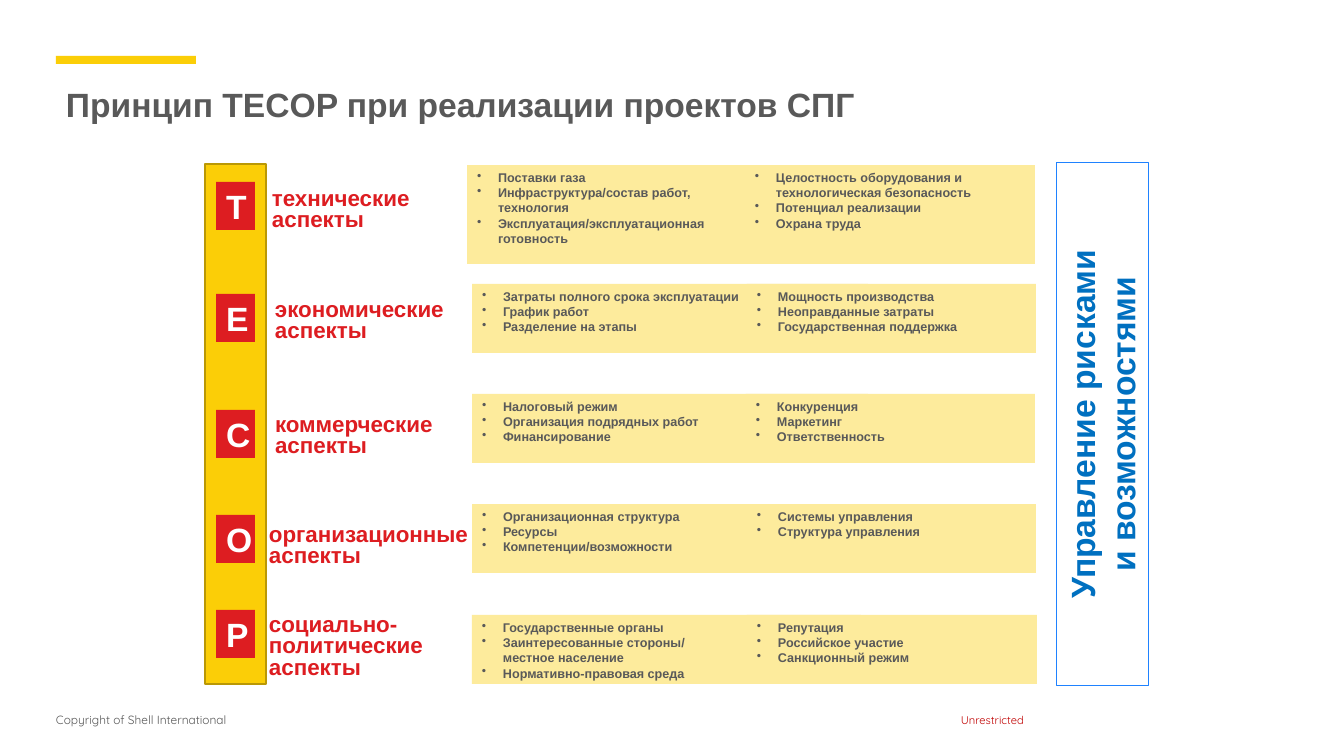
from lxml import etree
from pptx import Presentation
from pptx.dml.color import RGBColor
from pptx.enum.shapes import MSO_SHAPE
from pptx.enum.text import MSO_ANCHOR, MSO_AUTO_SIZE, PP_ALIGN
from pptx.oxml.ns import qn
from pptx.util import Pt

RECTANGLE = MSO_SHAPE.RECTANGLE
TOP, MIDDLE = MSO_ANCHOR.TOP, MSO_ANCHOR.MIDDLE
LEFT, CENTER = PP_ALIGN.LEFT, PP_ALIGN.CENTER
NO_AUTOFIT = MSO_AUTO_SIZE.NONE

YELLOW = RGBColor(0xFB, 0xCE, 0x07)
DARK_YELLOW = RGBColor(0xBA, 0x98, 0x05)
PALE_YELLOW = RGBColor(0xFD, 0xEB, 0x9C)
RED = RGBColor(0xDD, 0x1D, 0x21)
DARK_RED = RGBColor(0xC0, 0x00, 0x00)
GREY = RGBColor(0x59, 0x59, 0x59)
WHITE = RGBColor(0xFF, 0xFF, 0xFF)
BLUE = RGBColor(0x00, 0x70, 0xC0)
LIGHT_BLUE = RGBColor(0x1F, 0x82, 0xFF)

EMU_PER_PX = 914400 / 100.8
PAGE_SIZE = (1344, 756)
DEFAULT_INSETS = (10, 5, 10, 5)
FOOTER_INSETS = (0, 0, 0, 5)
BULLET_INDENT = 21

TITLE = "Принцип TECOP при реализации проектов СПГ"
COPYRIGHT = "Copyright of Shell International"
CLASSIFICATION = "Unrestricted"
RISKS = ["Управление рисками", "и возможностями"]

# A "\v" is a line break inside one bullet. Places are (left, top, width, height).
ASPECTS = [
    {"letter": "T", "letter_top": 182,
     "label": ["технические", "аспекты"], "label_at": (262, 184, 165, 51),
     "left": ["Поставки газа", "Инфраструктура/состав работ,\vтехнология",
              "Эксплуатация/эксплуатационная\vготовность"],
     "right": ["Целостность оборудования и технологическая безопасность",
               "Потенциал реализации", "Охрана труда"],
     "left_at": (467, 165, 401, 99), "right_at": (745, 165, 290, 99)},
    {"letter": "E", "letter_top": 294,
     "label": ["экономические", "аспекты"], "label_at": (265, 295, 192, 51),
     "left": ["Затраты полного срока эксплуатации", "График работ",
              "Разделение на этапы"],
     "right": ["Мощность производства", "Неоправданные затраты",
               "Государственная поддержка"],
     "left_at": (472, 284, 396, 69), "right_at": (747, 284, 289, 69)},
    {"letter": "C", "letter_top": 410,
     "label": ["коммерческие", "аспекты"], "label_at": (265, 410, 179, 51),
     "left": ["Налоговый режим", "Организация подрядных работ", "Финансирование"],
     "right": ["Конкуренция", "Маркетинг", "Ответственность"],
     "left_at": (472, 394, 396, 69), "right_at": (746, 394, 289, 69)},
    {"letter": "O", "letter_top": 515,
     "label": ["организационные", "аспекты"], "label_at": (259, 520, 222, 51),
     "left": ["Организационная структура", "Ресурсы", "Компетенции/возможности"],
     "right": ["Системы управления", "Структура управления"],
     "left_at": (472, 504, 396, 69), "right_at": (747, 504, 289, 69)},
    {"letter": "P", "letter_top": 610,
     "label": ["социально-", "политические", "аспекты"],
     "label_at": (259, 610, 202, 72),
     "left": ["Государственные органы",
              "Заинтересованные стороны/\vместное население",
              "Нормативно-правовая среда"],
     "right": ["Репутация", "Российское участие", "Санкционный режим"],
     "left_at": (472, 615, 389, 69), "right_at": (747, 615, 290, 69)},
]


def px(length):
    return round(length * EMU_PER_PX)


def write(box, lines, size, color, font="Arial", bold=True, align=LEFT,
          anchor=TOP, spacing=None, bullets=False, insets=DEFAULT_INSETS):
    frame = box.text_frame
    frame.word_wrap = True
    frame.auto_size = NO_AUTOFIT
    frame.vertical_anchor = anchor
    (frame.margin_left, frame.margin_top,
     frame.margin_right, frame.margin_bottom) = map(px, insets)
    for index, line in enumerate(lines):
        para = frame.add_paragraph() if index else frame.paragraphs[0]
        para.text = line
        para.alignment = align
        if spacing:
            para.line_spacing = spacing
        if bullets:
            properties = para._p.get_or_add_pPr()
            properties.set("marL", str(px(BULLET_INDENT)))
            properties.set("indent", str(-px(BULLET_INDENT)))
            etree.SubElement(properties, qn("a:buChar"), char="•")
        for span in para.runs:
            span.font.name = font
            span.font.size = Pt(size)
            span.font.bold = bold
            span.font.color.rgb = color


def add_rectangle(page, place, fill=None, line=None, line_width=1):
    box = page.shapes.add_shape(RECTANGLE, *map(px, place))
    box.shadow.inherit = False
    if fill is None:
        box.fill.background()
    else:
        box.fill.solid()
        box.fill.fore_color.rgb = fill
    if line is None:
        box.line.fill.background()
    else:
        box.line.color.rgb = line
        box.line.width = Pt(line_width)
    return box


def add_text(page, place, lines, size, color, **text_format):
    box = page.shapes.add_textbox(*map(px, place))
    write(box, lines, size, color, **text_format)


def add_title(page):
    title = page.shapes.title
    title.left, title.top, title.width, title.height = map(px, (56, 79, 1232, 82))
    write(title, [TITLE], 24, GREY)


def add_aspect(page, aspect):
    square = add_rectangle(page, (216, aspect["letter_top"], 39, 48), RED)
    write(square, [aspect["letter"]], 24, WHITE, align=CENTER, anchor=MIDDLE)
    add_text(page, aspect["label_at"], aspect["label"], 16, RED, spacing=0.8)
    for side in ("left", "right"):
        panel = add_rectangle(page, aspect[side + "_at"], PALE_YELLOW)
        write(panel, aspect[side], 9, GREY, bullets=True)


def main():
    deck = Presentation()
    deck.slide_width, deck.slide_height = map(px, PAGE_SIZE)
    page = deck.slides.add_slide(deck.slide_layouts[5])

    add_rectangle(page, (56, 56, 140, 8), YELLOW)
    add_text(page, (56, 713, 370, 26), [COPYRIGHT], 8.5, GREY,
             font="Quicksand", bold=False, insets=FOOTER_INSETS)
    add_text(page, (933, 713, 119, 19), [CLASSIFICATION], 8, DARK_RED,
             font="Quicksand", bold=False, align=CENTER, insets=FOOTER_INSETS)
    add_title(page)

    add_rectangle(page, (205, 164, 61, 520), YELLOW, DARK_YELLOW, 2)
    for aspect in ASPECTS:
        add_aspect(page, aspect)

    risks = add_rectangle(page, (841, 378, 523, 92), None, LIGHT_BLUE, 0.75)
    risks.rotation = 270
    write(risks, RISKS, 24, BLUE, align=CENTER)

    deck.save("out.pptx")


if __name__ == "__main__":
    main()
